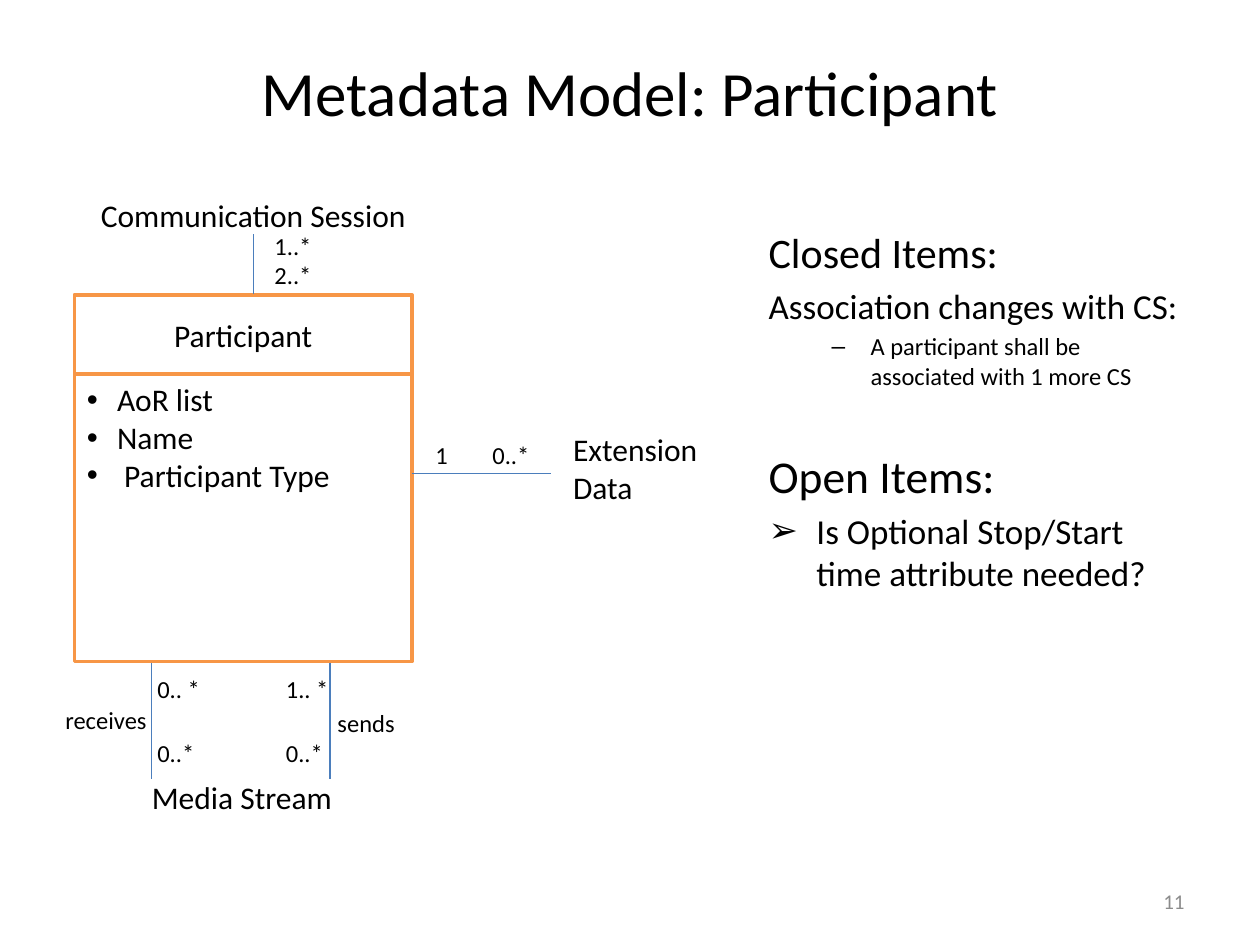
from collections import namedtuple

from lxml.etree import SubElement
from pptx import Presentation
from pptx.dml.color import RGBColor
from pptx.enum.shapes import MSO_CONNECTOR as Link, MSO_SHAPE as Form
from pptx.enum.text import MSO_ANCHOR as Anchor, MSO_AUTO_SIZE as Fit, PP_ALIGN as Align
from pptx.oxml.ns import qn
from pptx.util import Inches, Pt

Box = namedtuple("Box", "x y w h")
CELL = 0.1
BLACK, WHITE, GREY = "000000", "FFFFFF", "8C8C8C"
BLUE, ORANGE = "4B7EBC", "F79646"


def cells(*counts):
    """Turn counts of grid cells into lengths."""
    return [Inches(n * CELL) for n in counts]


def inner(box, x, y, w, h):
    """Return a box placed from the corner of another box."""
    return Box(box.x + x, box.y + y, w, h)


def paint(target, hue):
    """Give a solid colour to a font, fill or line."""
    target.rgb = RGBColor.from_string(hue)


def style(para, text, size, hue=BLACK, **looks):
    """Fill a paragraph with one run and set its format."""
    run = para.add_run()
    run.text = text
    for name, value in {"name": "Calibri", "size": Pt(size)}.items():
        setattr(run.font, name, value)
    paint(run.font.color, hue)
    for name, value in looks.items():
        setattr(para, name, value)


def bullet(para, mark, left, hang):
    """Set the hanging indent of a paragraph and its bullet, if any."""
    props = para._p.get_or_add_pPr()
    props.set("marL", str(Inches(left)))
    props.set("indent", str(-Inches(hang)))
    if mark:
        SubElement(props, qn("a:buFont"), typeface="Arial")
        SubElement(props, qn("a:buChar"), char=mark)
    else:
        SubElement(props, qn("a:buNone"))


def panel(slide, box, lines, size=18, align=Align.LEFT, fill=None, edge=None,
          form=Form.FLOWCHART_PROCESS, anchor=Anchor.MIDDLE):
    """Draw a box of text lines and return its paragraphs."""
    shape = slide.shapes.add_shape(form, *cells(*box))
    shape.shadow.inherit = False
    if fill:
        shape.fill.solid()
        paint(shape.fill.fore_color, fill)
    else:
        shape.fill.background()
    if edge:
        paint(shape.line.color, edge)
        shape.line.width = Pt(2)
    else:
        shape.line.fill.background()
    frame = shape.text_frame
    looks = {"word_wrap": True, "vertical_anchor": anchor}
    for name, value in looks.items():
        setattr(frame, name, value)
    for i, text in enumerate(lines):
        para = frame.add_paragraph() if i else frame.paragraphs[0]
        style(para, text, size, alignment=align)
    return frame.paragraphs


def label(slide, box, *lines, align=Align.LEFT):
    """Draw a small white label."""
    panel(slide, box, lines, 14, align, WHITE, form=Form.RECTANGLE)


def wire(slide, box, kind=Link.STRAIGHT):
    """Draw a thin line across a box from its top left corner."""
    ends = cells(box.x, box.y, box.x + box.w, box.y + box.h)
    line = slide.shapes.add_connector(kind, *ends)
    paint(line.line.color, BLUE)
    line.line.width = Pt(0.75)
    SubElement(line._element.spPr, qn("a:effectLst"))


def entity(slide, box, name, fields, head=6.3):
    """Draw a class box with its name above its fields."""
    panel(slide, inner(box, 0, 0, box.w, head), [name], align=Align.CENTER,
          fill=WHITE, edge=ORANGE)
    paras = panel(slide, inner(box, 0, head, box.w, box.h - head), fields,
                  fill=WHITE, edge=ORANGE, anchor=Anchor.TOP)
    for para in paras:
        bullet(para, "•", 0.24, 0.24)


def extension(slide, box):
    """Draw the extension data and its link above the labels."""
    panel(slide, inner(box, 11.8, 0, box.w - 11.8, box.h), ["Extension", "Data"])
    for text, x, w in (("1", 0.4, 3.9), ("0..*", 5.1, 5.5)):
        label(slide, inner(box, x, 0.1, w, 3.1), text, align=Align.CENTER)
    wire(slide, inner(box, 0, 3.2, 11, 0))


def session(slide, box):
    """Draw the session name and its link down."""
    panel(slide, inner(box, 0, 0, box.w, 5.5), ["Communication Session"],
          align=Align.CENTER)
    label(slide, inner(box, 14.1, 3.9, 6.3, 4.9), "1..*", "2..*")
    wire(slide, inner(box, box.w / 2, 4.3, 0, 4.7), Link.ELBOW)


def stream(slide, box):
    """Draw the media stream and its two links up."""
    panel(slide, inner(box, 1.6, 7.9, 26.8, 5.5), ["Media Stream"],
          align=Align.CENTER)
    sides = (("receives", 0, 3, "0.. *", 7.3, 7.8),
             ("sends", 21.6, 3.2, "1.. *", 17.5, 22))
    for role, x, y, top, col, rod in sides:
        label(slide, inner(box, x, y, 9.2, 3.1), role)
        label(slide, inner(box, col, 0.9, 5.5, 2.3), top)
        label(slide, inner(box, col, 5.9, 5.5, 2.5), "0..*")
        wire(slide, inner(box, rod, 0, 0, 9.2))


def settle(holder, box, anchor):
    """Move a placeholder into a box and return its text frame."""
    for name, value in zip(("left", "top", "width", "height"), cells(*box)):
        setattr(holder, name, value)
    frame = holder.text_frame
    looks = {"word_wrap": True, "auto_size": Fit.NONE, "vertical_anchor": anchor}
    for name, value in looks.items():
        setattr(frame, name, value)
    return frame


def title(slide, box, text):
    """Set the slide title."""
    frame = settle(slide.shapes.title, box, Anchor.MIDDLE)
    style(frame.paragraphs[0], text, 36, alignment=Align.CENTER)


def items(slide, box):
    """Fill the body with the closed and open items."""
    frame = settle(slide.placeholders[1], box, Anchor.TOP)
    rows = (("Closed Items:", 24, 0, None, 0),
            ("Association changes with CS:", 20, 0, None, 0),
            ("A participant shall be associated with 1 more CS", 14, 1, "–", 0),
            ("Open Items:", 26, 0, None, 28),
            ("Is Optional Stop/Start time attribute needed?", 20, 0, "➢", 0))
    for i, (text, size, level, mark, gap) in enumerate(rows):
        para = frame.add_paragraph() if i else frame.paragraphs[0]
        style(para, text, size, level=level, space_before=Pt(size * 0.2 + gap))
        bullet(para, mark, *((0.81, 0.31) if level else (0.38, 0.38)))


def number(slide, box, text):
    """Write the slide number."""
    frame = slide.shapes.add_textbox(*cells(*box)).text_frame
    frame.word_wrap, frame.vertical_anchor = True, Anchor.MIDDLE
    style(frame.paragraphs[0], text, 12, GREY, alignment=Align.RIGHT)


def main():
    """Build the slide and save it."""
    deck = Presentation()
    deck.slide_width, deck.slide_height = cells(100, 75)
    slide = deck.slides.add_slide(deck.slide_layouts[1])
    title(slide, Box(5, 3, 90, 8.5), "Metadata Model: Participant")
    number(slide, Box(71.7, 69.5, 23.3, 4), "11")
    entity(slide, Box(5.9, 23.4, 26.8, 29.1), "Participant",
           ["AoR list", "Name", " Participant Type"])
    extension(slide, Box(32.7, 34.4, 26, 5.5))
    items(slide, Box(60, 17.5, 34.8, 55))
    session(slide, Box(6.7, 14.3, 26.8, 9.1))
    stream(slide, Box(4.2, 52.6, 30.8, 13.4))
    deck.save("out.pptx")


if __name__ == "__main__":
    main()
